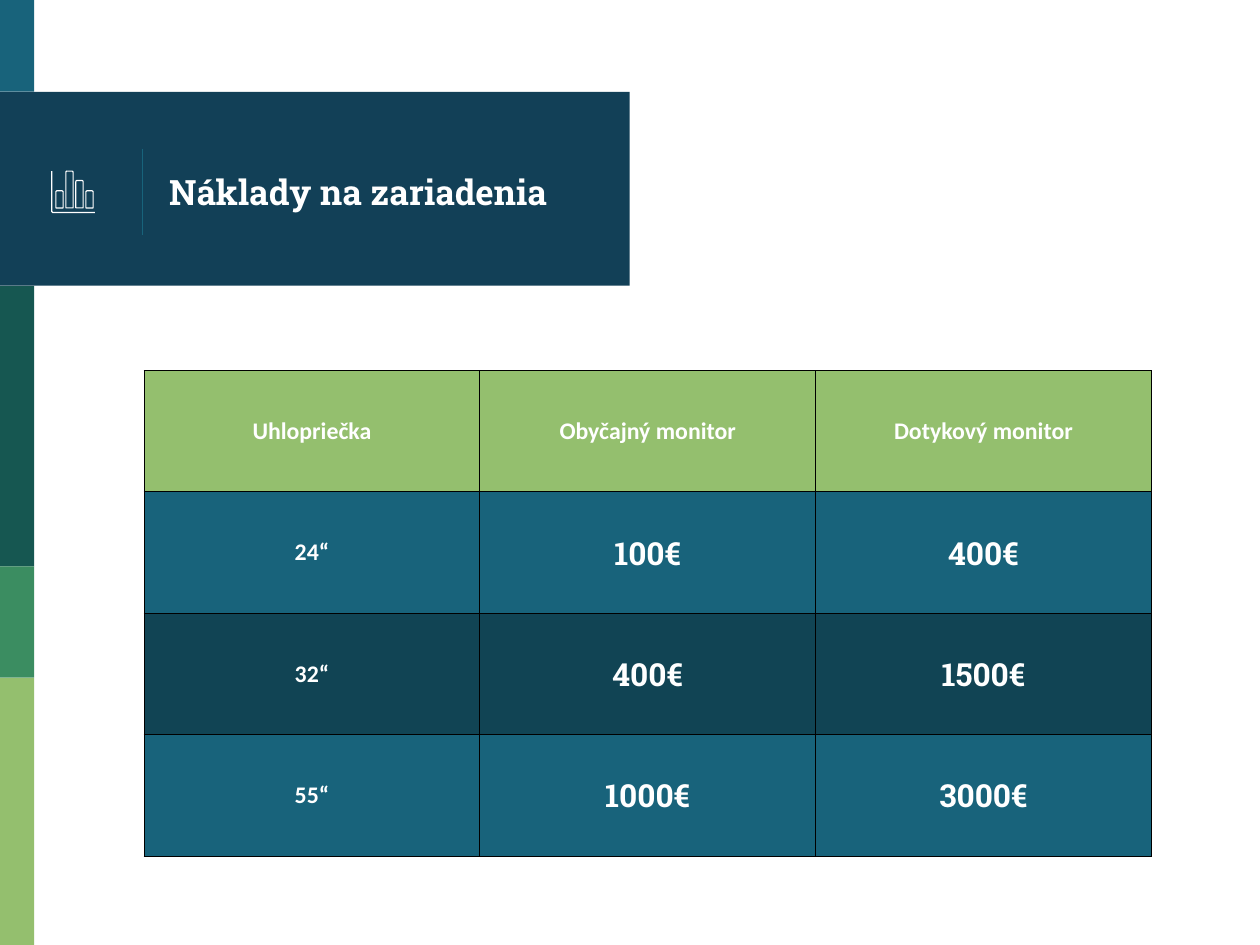
from lxml.etree import SubElement
from pptx import Presentation
from pptx.dml.color import RGBColor
from pptx.enum.shapes import MSO_CONNECTOR, MSO_SHAPE
from pptx.enum.text import MSO_ANCHOR, MSO_AUTO_SIZE, PP_ALIGN
from pptx.oxml.ns import qn
from pptx.util import Pt

WIDTH, HEIGHT = 793.7, 595.28
WHITE, BLACK = "FFFFFF", "000000"
BLUE, NAVY, PETROL = "18637B", "124057", "114454"
FOREST, GREEN, LIME = "165751", "3B8D61", "94BF6E"


def color(hex_value):
    return RGBColor.from_string(hex_value)


class SlideBuilder:
    heading_font = "Roboto Slab"
    text_font = "Calibri"
    line_width = 0.75

    def __init__(self, slide):
        self.slide = slide
        self.shapes = slide.shapes

    def style_text(self, paragraph, font_name, size, align):
        paragraph.alignment = align
        for run in paragraph.runs:
            font = run.font
            font.name, font.size, font.bold = font_name, Pt(size), True
            font.color.rgb = color(WHITE)

    def style_line(self, line, hex_value):
        line.color.rgb = color(hex_value)
        line.width = Pt(self.line_width)

    def block(self, left, top, width, height, fill):
        shape = self.shapes.add_shape(
            MSO_SHAPE.RECTANGLE, Pt(left), Pt(top), Pt(width), Pt(height))
        shape.shadow.inherit = False
        shape.fill.solid()
        shape.fill.fore_color.rgb = color(fill)
        shape.line.fill.background()

    def line(self, x1, y1, x2, y2, hex_value):
        connector = self.shapes.add_connector(
            MSO_CONNECTOR.STRAIGHT, Pt(x1), Pt(y1), Pt(x2), Pt(y2))
        self.style_line(connector.line, hex_value)
        SubElement(connector.element.spPr, qn("a:effectLst"))

    def outline_bar(self, left, top, width, height):
        bar = self.shapes.add_shape(
            MSO_SHAPE.ROUND_2_SAME_RECTANGLE, Pt(left), Pt(top), Pt(width), Pt(height))
        bar.adjustments[0] = 0.17
        bar.shadow.inherit = False
        bar.fill.background()
        self.style_line(bar.line, WHITE)

    def axes(self, points):
        corners = [(Pt(x), Pt(y)) for x, y in points]
        builder = self.shapes.build_freeform(*corners[0])
        builder.add_line_segments(corners[1:], close=False)
        axes = builder.convert_to_shape()
        axes.shadow.inherit = False
        axes.fill.background()
        self.style_line(axes.line, WHITE)

    def title(self, text, left, top, width, height):
        title = self.shapes.title
        title.left, title.top = Pt(left), Pt(top)
        title.width, title.height = Pt(width), Pt(height)
        frame = title.text_frame
        frame.text = text
        frame.word_wrap = True
        frame.auto_size = MSO_AUTO_SIZE.NONE
        frame.vertical_anchor = MSO_ANCHOR.MIDDLE
        frame.margin_left = frame.margin_right = Pt(7.2)
        frame.margin_top = frame.margin_bottom = Pt(7.2)
        self.style_text(frame.paragraphs[0], self.heading_font, 22, PP_ALIGN.LEFT)
        # Bring the title in front of the band
        title.element.getparent().append(title.element)

    def cell_borders(self, cell):
        properties = cell._tc.get_or_add_tcPr()
        for side in ("lnL", "lnR", "lnT", "lnB"):
            border = SubElement(properties, qn(f"a:{side}"), w=str(Pt(self.line_width)))
            fill = SubElement(border, qn("a:solidFill"))
            SubElement(fill, qn("a:srgbClr"), val=BLACK)

    def table(self, rows, row_fills, left, top, column_width, row_height):
        count = len(rows[0])
        table = self.shapes.add_table(
            len(rows), count, Pt(left), Pt(top),
            Pt(column_width * count), Pt(row_height * len(rows))).table
        table.horz_banding = False
        for column in table.columns:
            column.width = Pt(column_width)
        for r, (texts, fill) in enumerate(zip(rows, row_fills)):
            table.rows[r].height = Pt(row_height)
            for c, text in enumerate(texts):
                cell = table.cell(r, c)
                self.cell_borders(cell)
                cell.fill.solid()
                cell.fill.fore_color.rgb = color(fill)
                cell.vertical_anchor = MSO_ANCHOR.MIDDLE
                cell.text_frame.text = text
                is_price = r > 0 and c > 0
                font_name = self.heading_font if is_price else self.text_font
                self.style_text(cell.text_frame.paragraphs[0], font_name,
                                20 if is_price else 15, PP_ALIGN.CENTER)


def main():
    presentation = Presentation()
    presentation.slide_width, presentation.slide_height = Pt(WIDTH), Pt(HEIGHT)
    page = SlideBuilder(presentation.slides.add_slide(presentation.slide_layouts[5]))

    # Coloured side strip and title band
    strip_width, band_top, band_bottom = 21.6, 57.8, 180
    strip = [(0, BLUE), (band_bottom, FOREST), (356.8, GREEN), (427, LIME)]
    ends = [band_top] + [top for top, _ in strip[2:]] + [HEIGHT]
    for (top, fill), end in zip(strip, ends):
        page.block(0, top, strip_width, end - top, fill)
    page.block(0, band_top, 396.6, band_bottom - band_top, NAVY)

    # Title with divider
    page.line(90, 93.6, 90, 148, BLUE)
    page.title("Náklady na zariadenia", 99.4, 61.2, 291.6, 118.8)

    # Bar chart icon
    page.axes([(32.6, 107.8), (32.6, 133.2), (33.3, 133.9), (59.8, 133.9)])
    bar_base, bar_step = 131, 6.3
    for i, bar_height in enumerate((10.8, 23.2, 17.3, 10.8)):
        page.outline_bar(35.2 + i * bar_step, bar_base - bar_height, 4.6, bar_height)

    # Price table
    prices = [
        ("Uhlopriečka", "Obyčajný monitor", "Dotykový monitor"),
        ("24“", "100€", "400€"),
        ("32“", "400€", "1500€"),
        ("55“", "1000€", "3000€"),
    ]
    page.table(prices, (LIME, BLUE, PETROL, BLUE), 90.8, 233.4, 211.5, 76.5)

    presentation.save("out.pptx")


if __name__ == "__main__":
    main()
